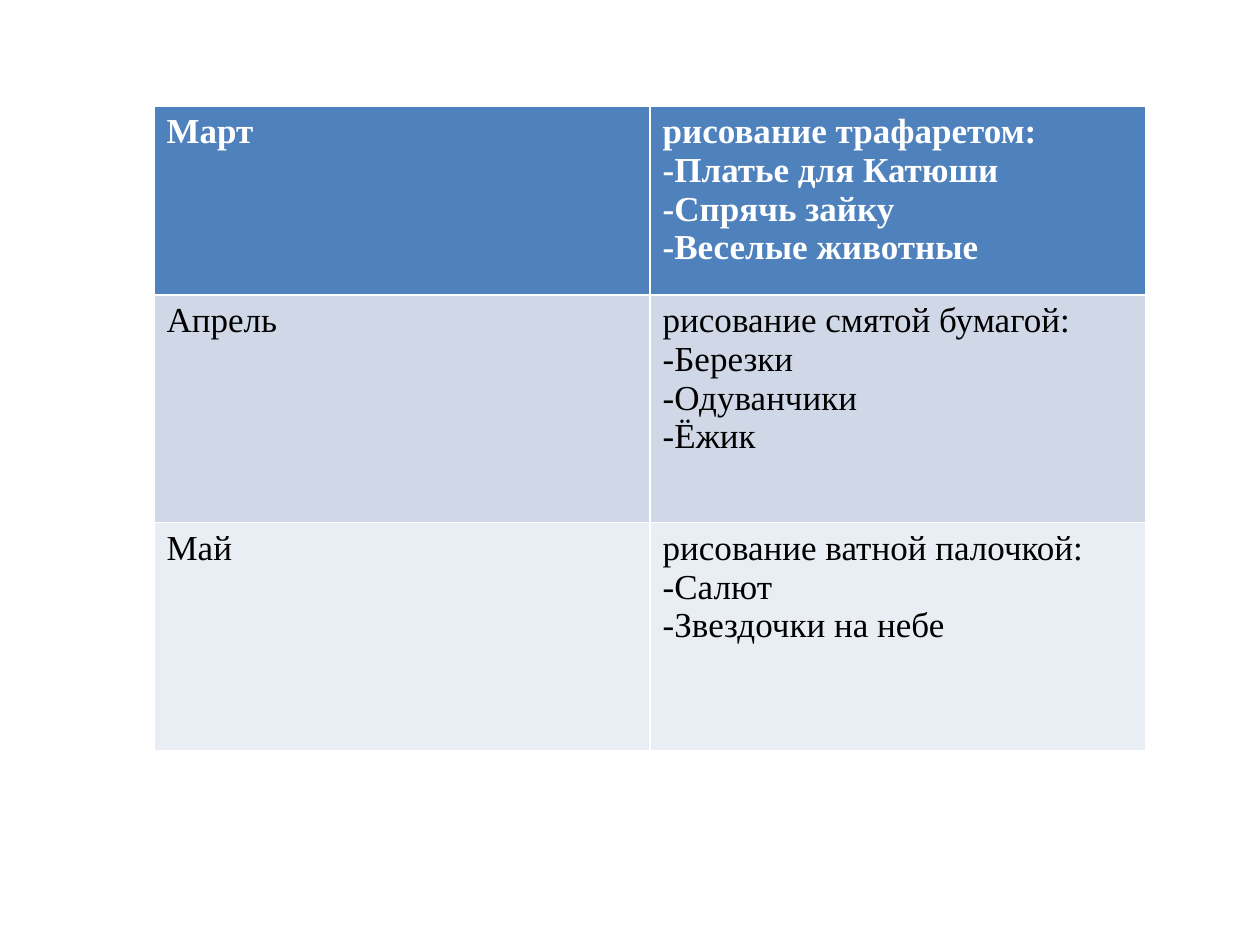
from pptx import Presentation
from pptx.dml.color import RGBColor
from pptx.util import Pt

MONTHS = [
    ("Март", ["рисование трафаретом:", "-Платье для Катюши",
              "-Спрячь зайку", "-Веселые животные"]),
    ("Апрель", ["рисование смятой бумагой:", "-Березки",
                "-Одуванчики", "-Ёжик"]),
    ("Май", ["рисование ватной палочкой:", "-Салют", "-Звездочки на небе"]),
]

THEME = {
    "font": "Times New Roman",
    "size": Pt(20),
    "header": {"fill": "4F81BD", "text": "FFFFFF"},
    "bands": [{"fill": "D0D8E8", "text": "000000"},
              {"fill": "E9EDF4", "text": "000000"}],
}

BLANK_LAYOUT = 6
LEFT, TOP = 88, 60.5
COLUMN_WIDTH = 283.5
ROW_HEIGHTS = [108, 130.2, 130.2]


def fill_cell(cell, lines, colors, bold):
    cell.fill.solid()
    cell.fill.fore_color.rgb = RGBColor.from_string(colors["fill"])
    cell.text_frame.text = "\n".join(lines)
    for paragraph in cell.text_frame.paragraphs:
        for run in paragraph.runs:
            run.font.name = THEME["font"]
            run.font.size = THEME["size"]
            run.font.bold = bold
            run.font.color.rgb = RGBColor.from_string(colors["text"])


def main():
    prs = Presentation()
    prs.slide_width, prs.slide_height = Pt(720), Pt(540)
    slide = prs.slides.add_slide(prs.slide_layouts[BLANK_LAYOUT])

    # The default table style supplies the white rules between cells.
    plan = slide.shapes.add_table(
        len(MONTHS), 2, Pt(LEFT), Pt(TOP),
        Pt(2 * COLUMN_WIDTH), Pt(sum(ROW_HEIGHTS))).table
    for column in plan.columns:
        column.width = Pt(COLUMN_WIDTH)

    for index, (month, activities) in enumerate(MONTHS):
        plan.rows[index].height = Pt(ROW_HEIGHTS[index])
        is_header = index == 0
        colors = THEME["header"] if is_header else THEME["bands"][(index - 1) % 2]
        fill_cell(plan.cell(index, 0), [month], colors, is_header)
        fill_cell(plan.cell(index, 1), activities, colors, is_header)

    prs.save("out.pptx")


if __name__ == "__main__":
    main()
